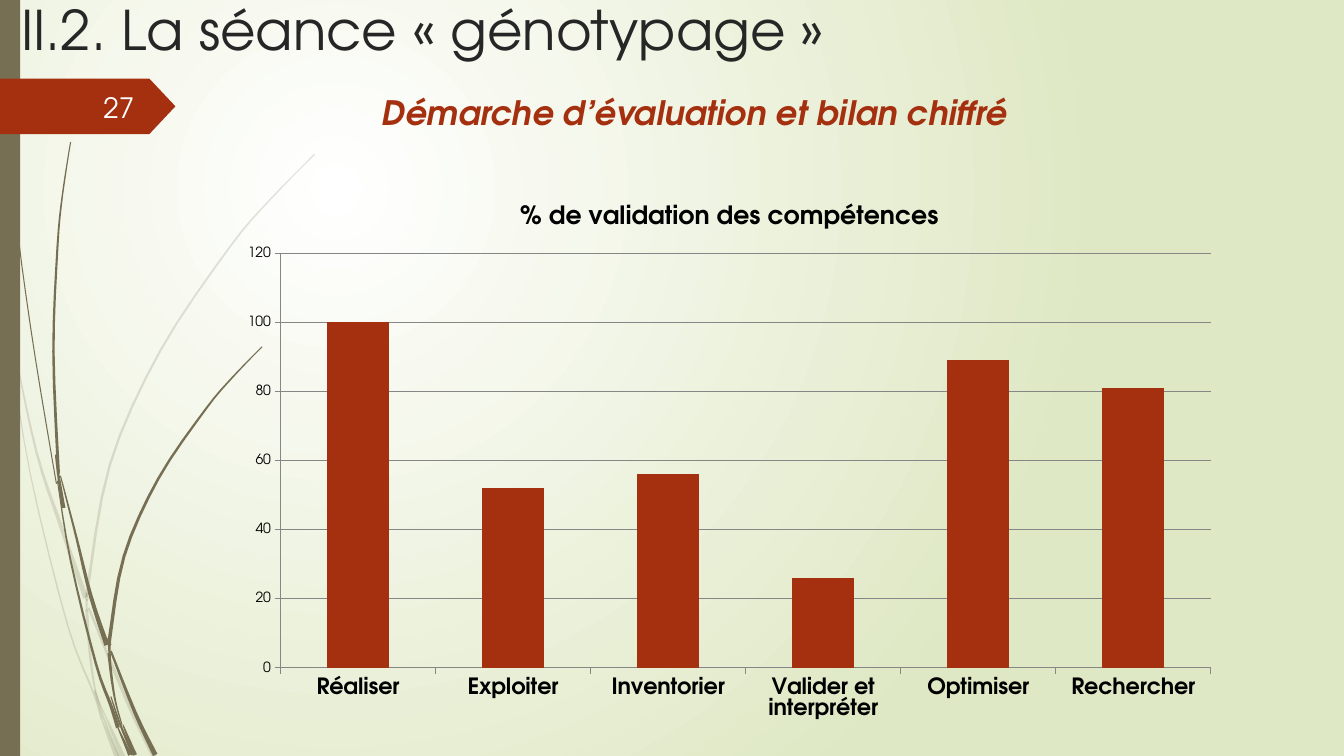
from dataclasses import dataclass
from math import hypot

from lxml import etree
from pptx import Presentation
from pptx.chart.data import CategoryChartData
from pptx.dml.color import RGBColor
from pptx.enum.chart import XL_CHART_TYPE, XL_TICK_MARK
from pptx.enum.shapes import MSO_SHAPE
from pptx.enum.text import MSO_ANCHOR, MSO_AUTO_SIZE, PP_ALIGN
from pptx.oxml.ns import qn
from pptx.util import Inches, Pt

COLUMN = XL_CHART_TYPE.COLUMN_CLUSTERED
TICK_OUT, TICK_NONE = XL_TICK_MARK.OUTSIDE, XL_TICK_MARK.NONE
RECTANGLE, PENTAGON = MSO_SHAPE.RECTANGLE, MSO_SHAPE.PENTAGON
TOP, MIDDLE = MSO_ANCHOR.TOP, MSO_ANCHOR.MIDDLE
LEFT, CENTER, RIGHT = PP_ALIGN.LEFT, PP_ALIGN.CENTER, PP_ALIGN.RIGHT
NO_FIT = MSO_AUTO_SIZE.NONE
WIDTH, HEIGHT = 13.33, 7.5
UNITS = 1000


@dataclass(frozen=True)
class Theme:
    """Colours, font and type sizes of the deck."""
    font: str = "TeX Gyre Adventor"
    glow: str = "FFFFFF"
    meadow: str = "DFE8C4"
    stem: str = "766F54"
    accent: str = "A53010"
    heading: str = "262626"
    number: str = "FEFFFF"
    ink: str = "000000"
    grid: str = "868686"
    title_size: float = 39
    subtitle_size: float = 24
    number_size: float = 20
    chart_title_size: float = 18
    category_size: float = 16
    value_size: float = 10


@dataclass(frozen=True)
class Box:
    """A rectangle in inches."""
    left: float
    top: float
    width: float
    height: float

    def emu(self):
        """Return the four lengths for python-pptx."""
        return [Inches(v) for v in (self.left, self.top, self.width, self.height)]


THEME = Theme()
PALE, SOLID = 20, 100
BLADES = {
    PALE: (
        (0.04, 0.01, ((0, 2.9), (0.1, 3.43), (0.11, 3.5))),
        (0.01, 0.05, ((0.14, 3.45), (0.36, 4.48), (0.6, 5.21), (0.85, 5.93))),
        (0.02, 0.05, ((0.88, 6.03), (1.25, 6.93), (1.53, 7.51))),
        (0.01, 0.05, ((1.05, 7.11), (1.22, 7.51))),
        (0.01, 0.02, ((0.11, 3.5), (0.3, 4.7), (0.67, 6.2), (0.93, 6.88), (1.01, 7.14))),
        (0.03, 0.01, ((0.86, 6.05), (0.89, 6.46), (0.95, 6.87), (1.05, 7.11))),
        (0.01, 0.03, ((3.12, 1.53), (2.68, 1.98), (2.28, 2.45), (1.59, 3.48),
                      (1.09, 4.61), (0.87, 5.84), (0.87, 5.92))),
        (0.01, 0.05, ((1.01, 7.14), (1.16, 7.51))),
        (0.02, 0.02, ((0.86, 5.88), (0.86, 6.06))),
        (0.02, 0.02, ((0.94, 6.85), (1.02, 7.1), (1.18, 7.5)))),
    SOLID: (
        (0.01, 0.01, ((0.03, 0), (0.05, 0.48), (0.07, 1.1), (0.18, 2.33),
                      (0.35, 3.55), (0.56, 4.8))),
        (0.01, 0.05, ((0.6, 4.72), (0.76, 5.34), (0.9, 5.91), (1.06, 6.4))),
        (0.02, 0.05, ((1.1, 6.46), (1.34, 7.07), (1.54, 7.49))),
        (0.01, 0.04, ((0.57, 4.77), (0.7, 5.56), (0.95, 6.58), (1.1, 7), (1.17, 7.22))),
        (0.01, 0.03, ((0.7, 1.41), (0.62, 1.93), (0.57, 2.45), (0.53, 3.49), (0.58, 4.7))),
        (0.01, 0.04, ((1.22, 7.19), (1.34, 7.49))),
        (0.01, 0.04, ((0.55, 4.51), (0.58, 4.72), (0.63, 5.04))),
        (0.01, 0.04, ((2.6, 3.44), (2.31, 3.74), (2.04, 4.06), (1.57, 4.75),
                      (1.23, 5.52), (1.09, 6.32), (1.09, 6.38))),
        (0.01, 0.04, ((1.17, 7.22), (1.29, 7.49))),
        (0.03, 0.01, ((1.08, 6.48), (1.11, 6.75), (1.15, 6.98), (1.21, 7.19))),
        (0.03, 0.02, ((1.08, 6.33), (1.09, 6.55))),
        (0.01, 0.03, ((1.1, 6.91), (1.19, 7.18), (1.32, 7.49))))}
VALIDATION = {"Réaliser": 100, "Exploiter": 52, "Inventorier": 56,
              "Valider et interpréter": 26, "Optimiser": 89, "Rechercher": 81}


def style_font(font, size, color, bold=False, italic=False):
    """Apply the deck font with a size, colour and weight."""
    font.name, font.size = THEME.font, Pt(size)
    font.bold, font.italic = bold, italic
    font.color.rgb = RGBColor.from_string(color)


def paint(shape, color):
    """Give a shape a flat fill without line or shadow."""
    shape.fill.solid()
    shape.fill.fore_color.rgb = RGBColor.from_string(color)
    shape.line.fill.background()
    shape.shadow.inherit = False


def write(shape, text, align, anchor, size, color, bold=False, italic=False):
    """Write one styled paragraph into a shape."""
    frame = shape.text_frame
    frame.text, frame.word_wrap = text, True
    frame.auto_size, frame.vertical_anchor = NO_FIT, anchor
    para = frame.paragraphs[0]
    para.alignment = align
    style_font(para.font, size, color, bold, italic)


def paint_background(slide):
    """Fill the page with a circular glow."""
    fill = slide.background.fill
    fill.gradient()
    for stop, color in zip(fill.gradient_stops, (THEME.glow, THEME.meadow)):
        stop.color.rgb = RGBColor.from_string(color)
    gradient = slide.element.find(".//" + qn("a:gradFill"))
    gradient.remove(gradient.find(qn("a:lin")))
    circle = etree.SubElement(gradient, qn("a:path"), {"path": "circle"})
    etree.SubElement(circle, qn("a:fillToRect"),
                     dict(l="50000", t="50000", r="100000", b="100000"))


def smooth(points, steps=4):
    """Return a Catmull-Rom curve through the points."""
    padded = (points[0], *points, points[-1])
    curve = []
    for a, b, c, d in zip(padded, padded[1:], padded[2:], padded[3:]):
        for t in (step / steps for step in range(steps)):
            curve.append(tuple(
                q + t * (r - p) / 2 + t ** 2 * (2 * p - 5 * q + 4 * r - s) / 2
                + t ** 3 * (3 * q - p - 3 * r + s) / 2
                for p, q, r, s in zip(a, b, c, d)))
    return curve + [points[-1]]


def draw_blade(slide, box, start, end, points, opacity):
    """Draw one tapered blade, measured from the corner of the box."""
    curve = smooth(points)
    last = len(curve) - 1
    near, far = [], []
    for index, (x, y) in enumerate(curve):
        before, after = curve[max(index - 1, 0)], curve[min(index + 1, last)]
        run, rise = after[0] - before[0], after[1] - before[1]
        half = (start + (end - start) * index / last) / 2 / hypot(run, rise)
        for side, sign in ((near, 1), (far, -1)):
            side.append(((box.left + x - sign * half * rise) * UNITS,
                         (box.top + y + sign * half * run) * UNITS))
    outline = near + far[::-1]
    builder = slide.shapes.build_freeform(*outline[0], scale=Inches(1) / UNITS)
    builder.add_line_segments(outline[1:], close=True)
    blade = builder.convert_to_shape()
    paint(blade, THEME.stem)
    if opacity < SOLID:
        color = blade.element.spPr.find(".//" + qn("a:srgbClr"))
        etree.SubElement(color, qn("a:alpha"), val=str(opacity * 1000))


def add_grass(slide, box):
    """Draw the blades and the stem along the left edge."""
    for opacity, blades in BLADES.items():
        for start, end, points in blades:
            draw_blade(slide, box, start, end, points, opacity)
    paint(slide.shapes.add_shape(RECTANGLE, *box.emu()), THEME.stem)


def add_page_tag(slide, box, number):
    """Draw the arrow tag with the page number."""
    tag = slide.shapes.add_shape(PENTAGON, *box.emu())
    tag.adjustments[0] = 0.47
    paint(tag, THEME.accent)
    label = Box(box.left + box.width / 3, box.top + 0.08, box.width * 0.49, 0.4)
    write(slide.shapes.add_textbox(*label.emu()), number, RIGHT, MIDDLE,
          THEME.number_size, THEME.number)


def add_headings(slide, box, title, subtitle):
    """Place the title in the box and the subtitle below it."""
    heading = slide.shapes.title
    heading.left, heading.top, heading.width, heading.height = box.emu()
    write(heading, title, LEFT, TOP, THEME.title_size, THEME.heading)
    below = Box(box.left + 1.78, box.top + 0.95, 9.99, 0.5)
    write(slide.shapes.add_textbox(*below.emu()), subtitle, CENTER, TOP,
          THEME.subtitle_size, THEME.accent, bold=True, italic=True)


def add_validation_chart(slide, box, title):
    """Chart the validation rate of each skill."""
    data = CategoryChartData()
    data.categories = list(VALIDATION)
    data.add_series("Series 1", list(VALIDATION.values()))
    chart = slide.shapes.add_chart(COLUMN, *box.emu(), data).chart
    style_font(chart.font, THEME.value_size, THEME.ink)
    chart.has_legend = False
    chart.chart_title.text_frame.text = title
    style_font(chart.chart_title.text_frame.paragraphs[0].font,
               THEME.chart_title_size, THEME.ink, bold=True)
    plot = chart.plots[0]
    plot.gap_width, plot.vary_by_categories = 150, False
    paint_bars = plot.series[0].format.fill
    paint_bars.solid()
    paint_bars.fore_color.rgb = RGBColor.from_string(THEME.accent)
    values, skills = chart.value_axis, chart.category_axis
    style_font(skills.tick_labels.font, THEME.category_size, THEME.ink, bold=True)
    for axis in (values, skills):
        axis.major_tick_mark, axis.minor_tick_mark = TICK_OUT, TICK_NONE
    for part in (values, skills, values.major_gridlines):
        part.format.line.width = Pt(0.75)
        part.format.line.color.rgb = RGBColor.from_string(THEME.grid)


def main():
    """Build the slide and save the deck."""
    deck = Presentation()
    deck.slide_width, deck.slide_height = Inches(WIDTH), Inches(HEIGHT)
    slide = deck.slides.add_slide(deck.slide_layouts[5])
    paint_background(slide)
    add_grass(slide, Box(0, 0, 0.2, HEIGHT))
    add_page_tag(slide, Box(0, 0.78, 1.74, 0.55), "27")
    add_headings(slide, Box(0.11, -0.09, 13.55, 0.85), "II.2. La séance « génotypage »",
                 "Démarche d’évaluation et bilan chiffré")
    add_validation_chart(slide, Box(2.26, 1.8, 9.95, 5.45),
                         "% de validation des compétences")
    deck.save("out.pptx")


if __name__ == "__main__":
    main()
